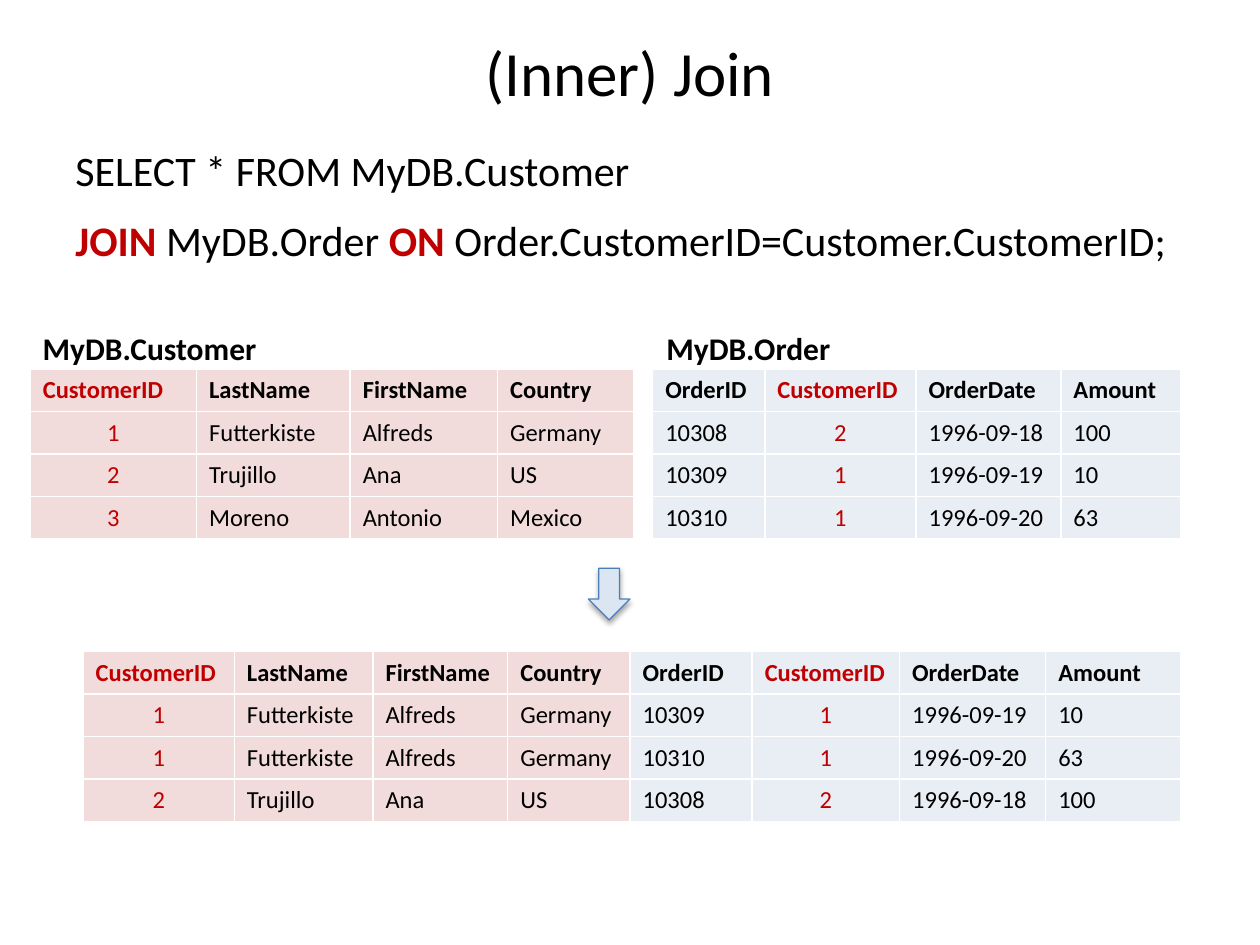
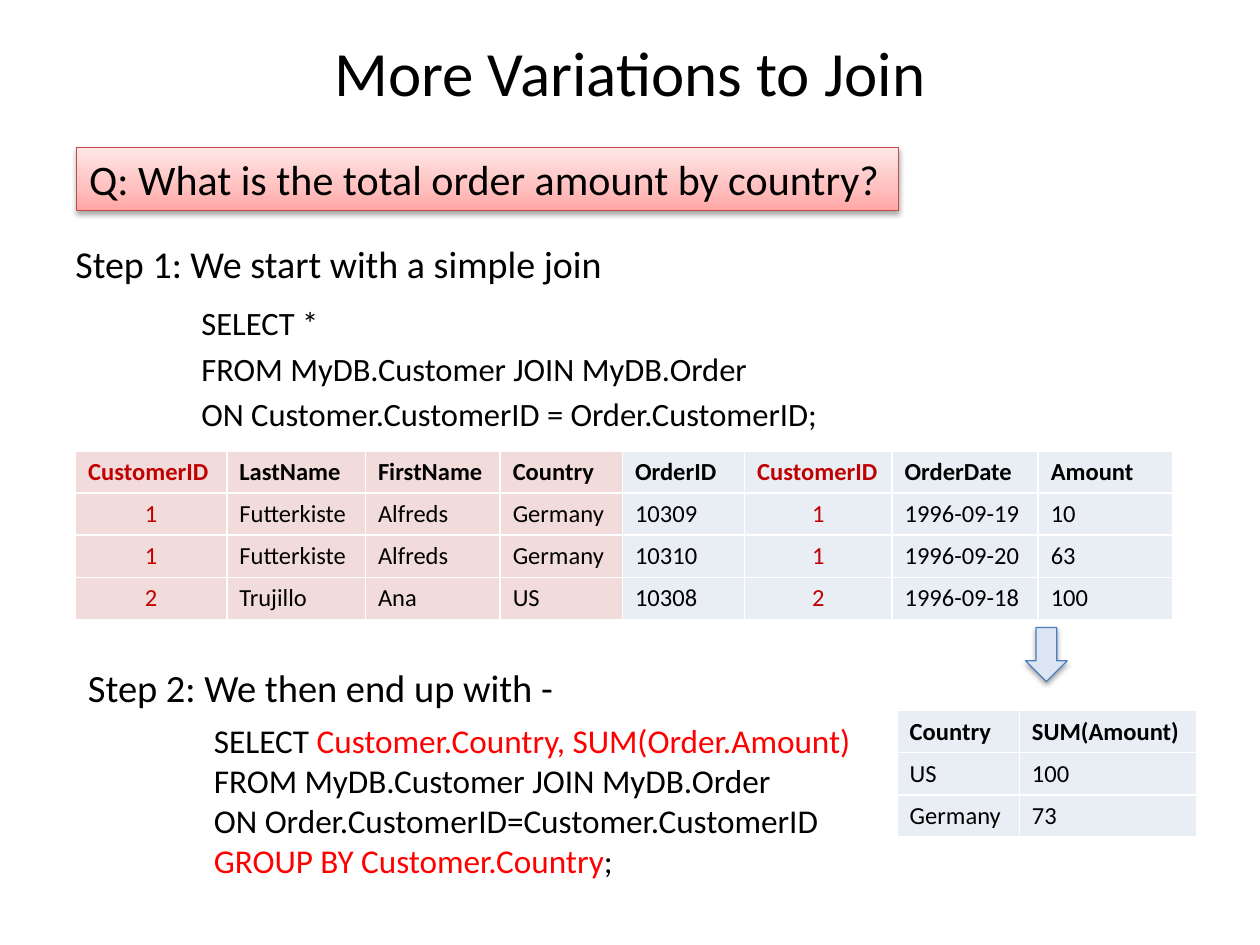
"""Build two slides that explain SQL joins with example tables."""
from copy import deepcopy

from lxml import etree
from pptx import Presentation
from pptx.dml.color import RGBColor
from pptx.enum import shapes, text
from pptx.oxml import ns
from pptx.util import Inches, Pt

FONT = "Calibri"
BLACK = RGBColor(0x00, 0x00, 0x00)
KEY_RED = RGBColor(0xC0, 0x00, 0x00)
BRIGHT_RED = RGBColor(0xFF, 0x00, 0x00)
CUSTOMER_FILL = RGBColor(0xF2, 0xDC, 0xDB)
ORDER_FILL = RGBColor(0xE9, 0xED, 0xF4)
ARROW_FILL = RGBColor(0xDC, 0xE6, 0xF2)
ARROW_LINE = RGBColor(0x4B, 0x7E, 0xBC)
QUESTION_LINE = RGBColor(0xBF, 0x4C, 0x48)
QUESTION_STOPS = [RGBColor(0xFF, 0xA6, 0xA5), RGBColor(0xFF, 0xC0, 0xBF),
                  RGBColor(0xFF, 0xE7, 0xE7)]
DRAWING = "http://schemas.openxmlformats.org/drawingml/2006/main"
BORDER = ('<a:{side} xmlns:a="' + DRAWING + '" w="12700"><a:solidFill>'
          '<a:srgbClr val="FFFFFF"/></a:solidFill></a:{side}>')
SHADOW = ('<a:outerShdw xmlns:a="' + DRAWING + '" blurRad="39370" dist="22860" '
          'dir="5400000" rotWithShape="0"><a:srgbClr val="000000">'
          '<a:alpha val="35000"/></a:srgbClr></a:outerShdw>')


def write_line(para, spans, size, bold=False):
    """Add runs given as (wording, colour) pairs, with key words in bold."""
    for wording, colour in spans:
        span = para.add_run()
        span.text = wording
        span.font.name = FONT
        span.font.size = Pt(size)
        span.font.bold = bold or colour == KEY_RED and size == 24
        span.font.color.rgb = colour


def add_grid(page, left, top, widths, rows, fill):
    """Add a table with white borders and red CustomerID columns."""
    frame = page.shapes.add_table(len(rows), len(widths), Inches(left), Inches(top),
                                  Inches(sum(widths)), Inches(len(rows) / 3))
    grid = frame.table
    grid.first_row = grid.horz_banding = False
    for column, width in zip(grid.columns, widths):
        column.width = Inches(width)
    for r, row in enumerate(rows):
        for c, value in enumerate(row):
            cell = grid.cell(r, c)
            cell.vertical_anchor = text.MSO_ANCHOR.MIDDLE
            cell.fill.solid()
            cell.fill.fore_color.rgb = fill
            properties = cell._tc.get_or_add_tcPr()
            for position, side in enumerate(["lnL", "lnR", "lnT", "lnB"]):
                properties.insert(position, etree.fromstring(BORDER.format(side=side)))
            is_key = rows[0][c] == "CustomerID"
            para = cell.text_frame.paragraphs[0]
            if is_key and r > 0:
                para.alignment = text.PP_ALIGN.CENTER
            write_line(para, [(value, KEY_RED if is_key else BLACK)], 14, bold=r == 0)


customer_head = ["CustomerID", "LastName", "FirstName", "Country"]
futterkiste = ["1", "Futterkiste", "Alfreds", "Germany"]
trujillo = ["2", "Trujillo", "Ana", "US"]
moreno = ["3", "Moreno", "Antonio", "Mexico"]
order_head = ["OrderID", "CustomerID", "OrderDate", "Amount"]
order_308 = ["10308", "2", "1996-09-18", "100"]
order_309 = ["10309", "1", "1996-09-19", "10"]
order_310 = ["10310", "1", "1996-09-20", "63"]

deck = Presentation()
deck.slide_width, deck.slide_height = Inches(10), Inches(7.5)
join_page, variations_page = [deck.slides.add_slide(deck.slide_layouts[6]) for _ in range(2)]

add_grid(join_page, 0.24, 2.93, [1.32, 1.22, 1.17, 1.08],
         [customer_head, futterkiste, trujillo, moreno], CUSTOMER_FILL)
add_grid(join_page, 5.18, 2.93, [0.89, 1.2, 1.15, 0.95],
         [order_head, order_308, order_309, order_310], ORDER_FILL)
add_grid(variations_page, 7.12, 5.64, [0.97, 1.41],
         [["Country", "SUM(Amount)"], ["US", "100"], ["Germany", "73"]], ORDER_FILL)

for page, left, top in [(join_page, 0.66, 5.17), (variations_page, 0.6, 3.58)]:
    add_grid(page, left, top, [1.2, 1.1, 1.07, 0.97],
             [customer_head, futterkiste, futterkiste, trujillo], CUSTOMER_FILL)
    add_grid(page, left + 4.34, top, [0.97, 1.17, 1.16, 1.07],
             [order_head, order_309, order_310, order_308], ORDER_FILL)

for page, title in [(join_page, "(Inner) Join"), (variations_page, "More Variations to Join")]:
    box = page.shapes.add_textbox(Inches(0.5), Inches(0.3), Inches(9), Inches(0.53))
    box.text_frame.word_wrap = True
    box.text_frame.vertical_anchor = text.MSO_ANCHOR.MIDDLE
    para = box.text_frame.paragraphs[0]
    para.alignment = text.PP_ALIGN.CENTER
    write_line(para, [(title, BLACK)], 36)

join_lines = [
    (1.1, [("SELECT * FROM MyDB.Customer", BLACK)]),
    (1.65, [("JOIN ", KEY_RED), ("MyDB.Order ", BLACK), ("ON ", KEY_RED),
            ("Order.CustomerID=Customer.CustomerID;", BLACK)]),
]
for top, spans in join_lines:
    box = join_page.shapes.add_textbox(Inches(0.5), Inches(top), Inches(9.42), Inches(0.68))
    box.text_frame.word_wrap = True
    write_line(box.text_frame.paragraphs[0], spans, 24)

for left, width, label in [(0.24, 1.91, "MyDB.Customer"), (5.19, 1.51, "MyDB.Order")]:
    box = join_page.shapes.add_textbox(Inches(left), Inches(2.56), Inches(width), Inches(0.4))
    box.text_frame.word_wrap = False
    write_line(box.text_frame.paragraphs[0], [(label, BLACK)], 18, bold=True)

steps = [
    (0.5, 1.86, 9, 1.39, 21.7, 18.6, 0.2, "Step 1: We start with a simple join", [
        [("SELECT *", BLACK)],
        [("FROM MyDB.Customer JOIN MyDB.Order", BLACK)],
        [("ON Customer.CustomerID = Order.CustomerID;", BLACK)]]),
    (0.6, 5.22, 8, 1.83, 22, 19, 0, "Step 2: We then end up with -", [
        [("SELECT ", BLACK), ("Customer.Country, SUM(Order.Amount)", BRIGHT_RED)],
        [("FROM MyDB.Customer JOIN MyDB.Order", BLACK)],
        [("ON Order.CustomerID=Customer.CustomerID", BLACK)],
        [("GROUP BY Customer.Country", BRIGHT_RED), (";", BLACK)]]),
]
for left, top, width, height, head_size, code_size, gap, heading, code in steps:
    box = variations_page.shapes.add_textbox(Inches(left), Inches(top),
                                             Inches(width), Inches(height))
    box.text_frame.word_wrap = True
    para = box.text_frame.paragraphs[0]
    para.space_after = Pt(6)
    write_line(para, [(heading, BLACK)], head_size)
    for spans in code:
        para = box.text_frame.add_paragraph()
        para.space_before = Pt(gap * code_size)
        para._p.get_or_add_pPr().set("marL", str(Inches(1)))
        write_line(para, spans, code_size)

question = variations_page.shapes.add_shape(shapes.MSO_SHAPE.RECTANGLE, Inches(0.61),
                                            Inches(1.17), Inches(6.52), Inches(0.5))
question.fill.gradient()
question.fill.gradient_angle = 90
stop_list = question._element.spPr.find(ns.qn("a:gradFill")).find(ns.qn("a:gsLst"))
stop_list.insert(1, deepcopy(stop_list[0]))
stop_list[1].set("pos", "35000")
for stop, colour in zip(question.fill.gradient_stops, QUESTION_STOPS):
    stop.color.rgb = colour
question.line.color.rgb = QUESTION_LINE
question.text_frame.word_wrap = False
para = question.text_frame.paragraphs[0]
para.alignment = text.PP_ALIGN.LEFT
write_line(para, [("Q: What is the total order amount by country?", BLACK)], 24)

shadowed = [question]
for page, left, top, height in [(join_page, 4.67, 4.51, 0.41),
                                (variations_page, 8.14, 4.98, 0.43)]:
    arrow = page.shapes.add_shape(shapes.MSO_SHAPE.DOWN_ARROW, Inches(left), Inches(top),
                                  Inches(0.33), Inches(height))
    arrow.fill.solid()
    arrow.fill.fore_color.rgb = ARROW_FILL
    arrow.line.color.rgb = ARROW_LINE
    shadowed.append(arrow)

for shape in shadowed:
    shape.line.width = Pt(0.75)
    shape.shadow.inherit = False
    effects = shape._element.spPr.find(ns.qn("a:effectLst"))
    effects.append(etree.fromstring(SHADOW))

deck.save("out.pptx")
